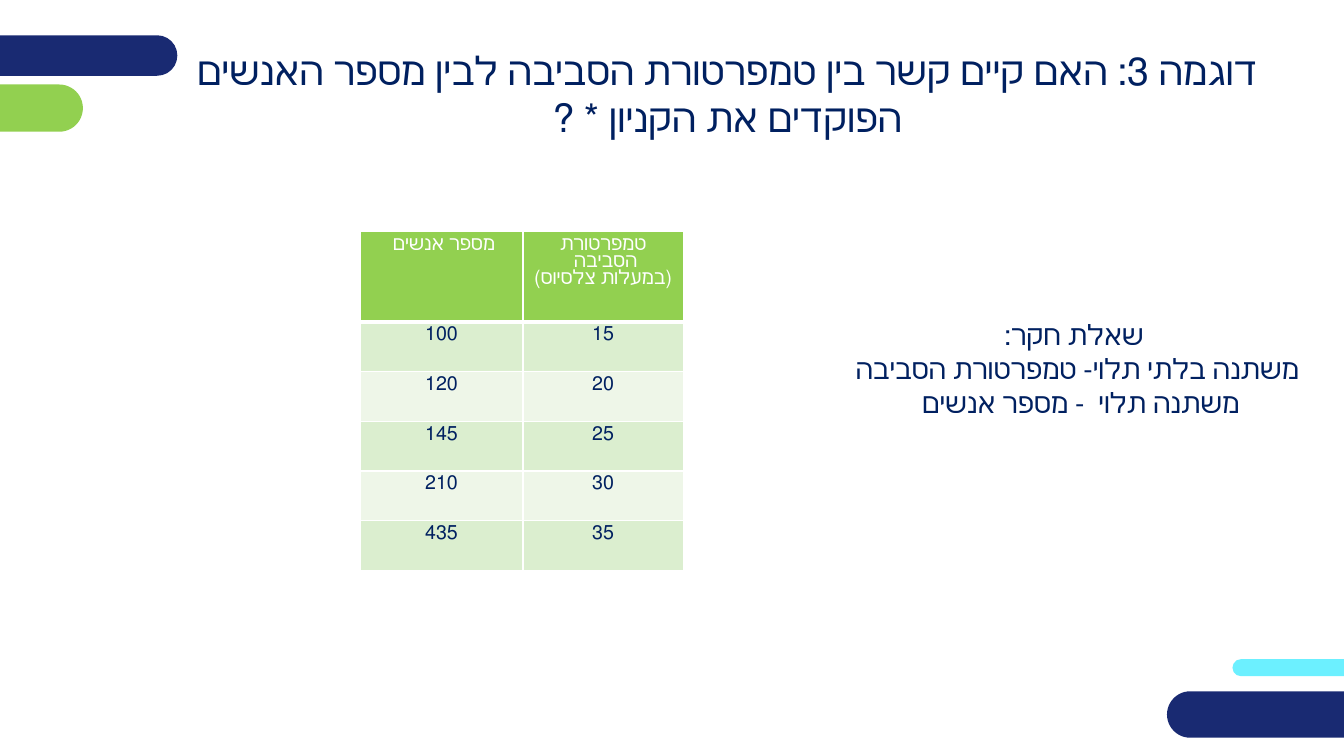
from lxml import etree
from pptx import Presentation
from pptx.dml.color import RGBColor
from pptx.enum.shapes import MSO_SHAPE
from pptx.enum.text import MSO_ANCHOR, PP_ALIGN
from pptx.oxml.ns import qn
from pptx.util import Cm, Pt

PILL = MSO_SHAPE.ROUNDED_RECTANGLE
CENTER = PP_ALIGN.CENTER
MIDDLE = MSO_ANCHOR.MIDDLE
NAVY = RGBColor(0x19, 0x2A, 0x72)
INK = RGBColor(0x00, 0x20, 0x60)
GREEN = RGBColor(0x92, 0xD0, 0x50)
CYAN = RGBColor(0x6C, 0xF0, 0xFF)
WHITE = RGBColor(0xFF, 0xFF, 0xFF)
BANDS = [RGBColor(0xEE, 0xF6, 0xE8), RGBColor(0xDB, 0xEE, 0xCF)]
FONT = "Arial"

PILLS = [
    (31.06, 16.61, 4.42, 0.43, CYAN),
    (-1.14, 2.13, 3.23, 1.19, GREEN),
    (-1.35, 0.89, 5.82, 1.02, NAVY),
    (29.41, 17.42, 6.1, 1.17, NAVY),
]
TITLE = ["דוגמה 3: האם קיים קשר בין טמפרטורת הסביבה לבין מספר האנשים הפוקדים את הקניון * ?"]
QUESTION = [
    "שאלת חקר:",
    "משתנה בלתי תלוי- טמפרטורת הסביבה ",
    "משתנה תלוי  - מספר אנשים  ",
]
HEADERS = [["מספר אנשים "], ["טמפרטורת הסביבה ", "(במעלות צלסיוס) "]]
VISITORS = [(100, 15), (120, 20), (145, 25), (210, 30), (435, 35)]
COLUMN_WIDTHS = [4.11, 4.04]
HEADER_HEIGHT, ROW_HEIGHT = 2.28, 1.25


def write_lines(tf, lines, size, color, spacing=None):
    for i, line in enumerate(lines):
        p = tf.paragraphs[0] if i == 0 else tf.add_paragraph()
        p.alignment = CENTER
        p.line_spacing = spacing
        p._p.get_or_add_pPr().set("rtl", "1")
        r = p.add_run()
        r.text = line
        for name, value in {"name": FONT, "size": Pt(size), "bold": False}.items():
            setattr(r.font, name, value)
        r.font.color.rgb = color


def add_pill(s, left, top, width, height, color):
    sp = s.shapes.add_shape(PILL, Cm(left), Cm(top), Cm(width), Cm(height))
    sp.adjustments[0] = 0.5
    sp.shadow.inherit = False
    sp.fill.solid()
    sp.fill.fore_color.rgb = color
    sp.line.fill.background()


def add_text(s, left, top, width, height, lines, size):
    tf = s.shapes.add_textbox(Cm(left), Cm(top), Cm(width), Cm(height)).text_frame
    tf.word_wrap = True
    tf.vertical_anchor = MIDDLE
    write_lines(tf, lines, size, INK)


def set_borders(cell, bottom):
    tcPr = cell._tc.get_or_add_tcPr()
    widths = {"a:lnL": 1, "a:lnR": 1, "a:lnT": 1, "a:lnB": bottom}
    for i, (tag, width) in enumerate(widths.items()):
        ln = etree.Element(qn(tag), w=str(Pt(width)))
        fill = etree.SubElement(ln, qn("a:solidFill"))
        etree.SubElement(fill, qn("a:srgbClr")).set("val", str(WHITE))
        tcPr.insert(i, ln)


def add_visitor_table(s, left, top):
    rows = [HEADERS] + [[[str(value)] for value in pair] for pair in VISITORS]
    heights = [HEADER_HEIGHT] + [ROW_HEIGHT] * len(VISITORS)
    table = s.shapes.add_table(
        len(rows), len(COLUMN_WIDTHS), Cm(left), Cm(top),
        Cm(sum(COLUMN_WIDTHS)), Cm(sum(heights)),
    ).table
    for column, width in zip(table.columns, COLUMN_WIDTHS):
        column.width = Cm(width)
    for i, (row, height) in enumerate(zip(rows, heights)):
        header = i == 0
        table.rows[i].height = Cm(height)
        for j, lines in enumerate(row):
            cell = table.cell(i, j)
            cell.fill.solid()
            cell.fill.fore_color.rgb = GREEN if header else BANDS[i % 2]
            set_borders(cell, 3 if header else 1)
            write_lines(cell.text_frame, lines, 14, WHITE if header else INK, 0.87)


def main():
    prs = Presentation()
    prs.slide_width, prs.slide_height = Cm(33.87), Cm(19.05)
    s = prs.slides.add_slide(prs.slide_layouts[6])
    for pill in PILLS:
        add_pill(s, *pill)
    add_text(s, 4.32, 1.47, 28.01, 1.78, TITLE, 28)
    add_visitor_table(s, 9.07, 5.84)
    add_text(s, 20.98, 7.82, 12.17, 2.92, QUESTION, 20)
    prs.save("out.pptx")


if __name__ == "__main__":
    main()
